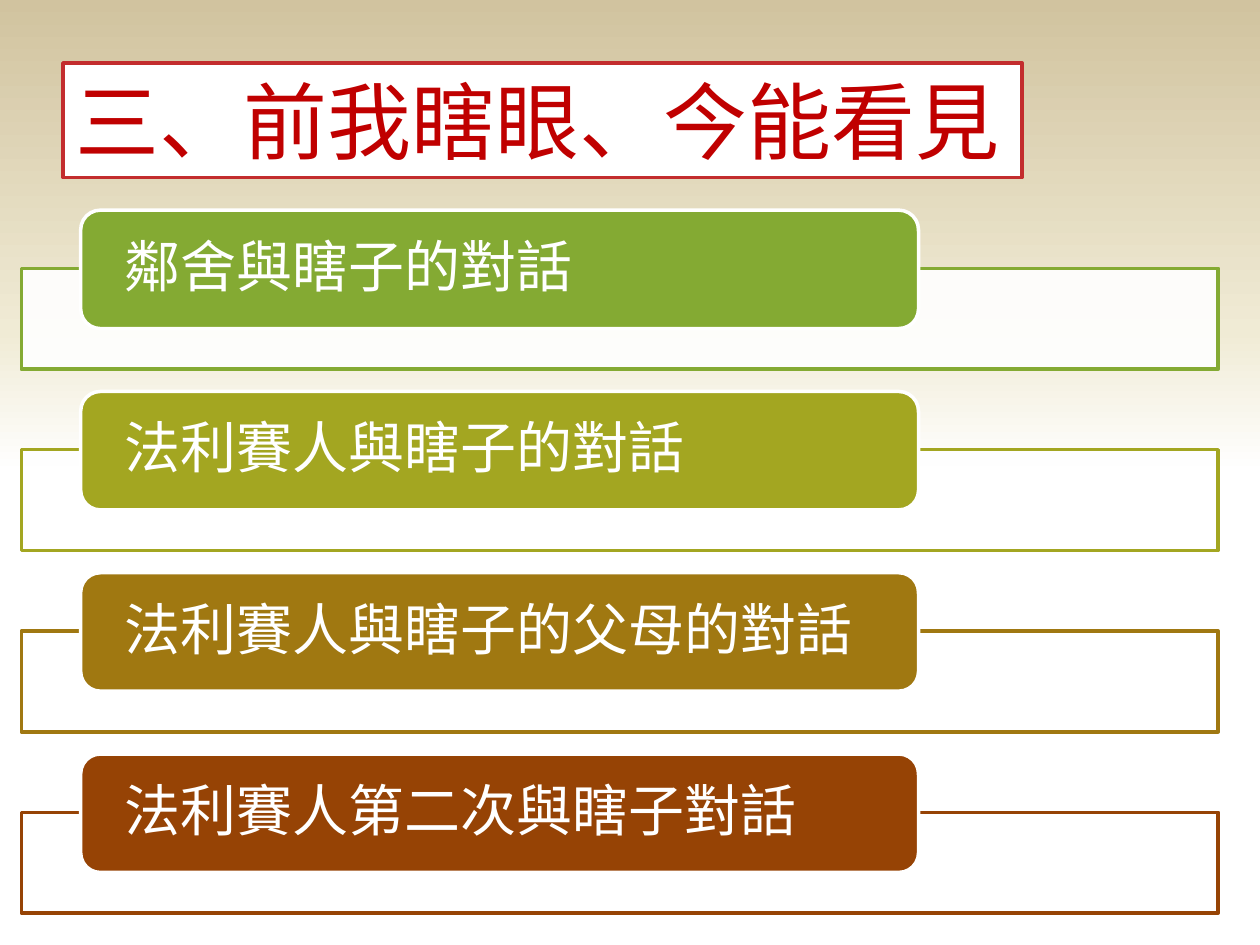
import copy

import pptx
import pptx.dml.color
import pptx.enum.shapes
import pptx.enum.text
import pptx.oxml
import pptx.oxml.ns
import pptx.util

Pt = pptx.util.Pt
SHAPES = pptx.enum.shapes.MSO_SHAPE

TITLE = "三、前我瞎眼、今能看見"
DIALOGUES = [
    ("鄰舍與瞎子的對話", "84AA33"),
    ("法利賽人與瞎子的對話", "A3A621"),
    ("法利賽人與瞎子的父母的對話", "A07811"),
    ("法利賽人第二次與瞎子對話", "964305"),
]
THEME = {
    "font": "Calibri",
    "title_size": 48,
    "label_size": 32,
    "title": "C00000",
    "title_line": "C32D2E",
    "white": "FFFFFF",
    "line_width": 2,
    "frame_opacity": 90,
    "background": [(0.5, "FFFFFF"), (0.65, "F0EBD5"), (1, "D1C39F")],
}

# Left, top, width and height in points
TITLE_BOX = (36, 36, 548, 65.5)
FRAME = (12.2, 153.4, 684, 57.6)
TAB = (46.1, 120.1, 478.8, 67.7)
PITCH = 103.6
LABEL_INSET = 21.6


def rgb(value):
    return pptx.dml.color.RGBColor.from_string(value)


def paint_background(page, stops):
    """Fill the page with a gradient that runs from bottom to top."""
    fill = page.background.fill
    fill.gradient()
    fill.gradient_angle = 90
    stop_list = next(page._element.iter(pptx.oxml.ns.qn("a:gsLst")))
    while len(stop_list) < len(stops):
        stop_list.append(copy.deepcopy(stop_list[0]))
    for stop, (position, color) in zip(fill.gradient_stops, stops):
        stop.position = position
        stop.color.rgb = rgb(color)


def style_box(box, fill, line):
    box.fill.solid()
    box.fill.fore_color.rgb = rgb(fill)
    box.line.color.rgb = rgb(line)
    box.line.width = Pt(THEME["line_width"])


def add_box(page, kind, place, fill, line):
    box = page.shapes.add_shape(kind, *map(Pt, place))
    box.shadow.inherit = False
    style_box(box, fill, line)
    return box


def set_opacity(box, percent):
    color = box.fill._xPr.find(".//" + pptx.oxml.ns.qn("a:srgbClr"))
    color.append(pptx.oxml.parse_xml(
        f'<a:alpha {pptx.oxml.ns.nsdecls("a")} val="{percent * 1000}"/>'))


def write_text(box, text, *, size, color, inset=7.2, wrap=True, spacing=1.0):
    frame = box.text_frame
    frame.word_wrap = wrap
    frame.vertical_anchor = pptx.enum.text.MSO_ANCHOR.MIDDLE
    frame.margin_left = frame.margin_right = Pt(inset)
    para = frame.paragraphs[0]
    para.alignment = pptx.enum.text.PP_ALIGN.LEFT
    para.line_spacing = spacing
    span = para.add_run()
    span.text = text
    span.font.name = THEME["font"]
    span.font.size = Pt(size)
    span.font.color.rgb = rgb(color)


def add_title(page):
    box = page.shapes.title
    box.left, box.top, box.width, box.height = map(Pt, TITLE_BOX)
    style_box(box, THEME["white"], THEME["title_line"])
    write_text(box, TITLE, size=THEME["title_size"], color=THEME["title"],
               wrap=False)
    box.text_frame.auto_size = pptx.enum.text.MSO_AUTO_SIZE.SHAPE_TO_FIT_TEXT


def add_dialogue(page, row, text, color):
    """Add an outlined frame with a coloured tab over its top edge."""
    def shifted(place):
        left, top, width, height = place
        return left, top + row * PITCH, width, height

    frame = add_box(page, SHAPES.RECTANGLE, shifted(FRAME),
                    THEME["white"], color)
    set_opacity(frame, THEME["frame_opacity"])
    tab = add_box(page, SHAPES.ROUNDED_RECTANGLE, shifted(TAB),
                  color, THEME["white"])
    write_text(tab, text, size=THEME["label_size"], color=THEME["white"],
               inset=LABEL_INSET, spacing=0.9)


def main():
    deck = pptx.Presentation()
    deck.slide_width, deck.slide_height = Pt(720), Pt(540)
    page = deck.slides.add_slide(deck.slide_layouts.get_by_name("Title Only"))
    paint_background(page, THEME["background"])
    add_title(page)
    for row, (text, color) in enumerate(DIALOGUES):
        add_dialogue(page, row, text, color)
    deck.save("out.pptx")


if __name__ == "__main__":
    main()
